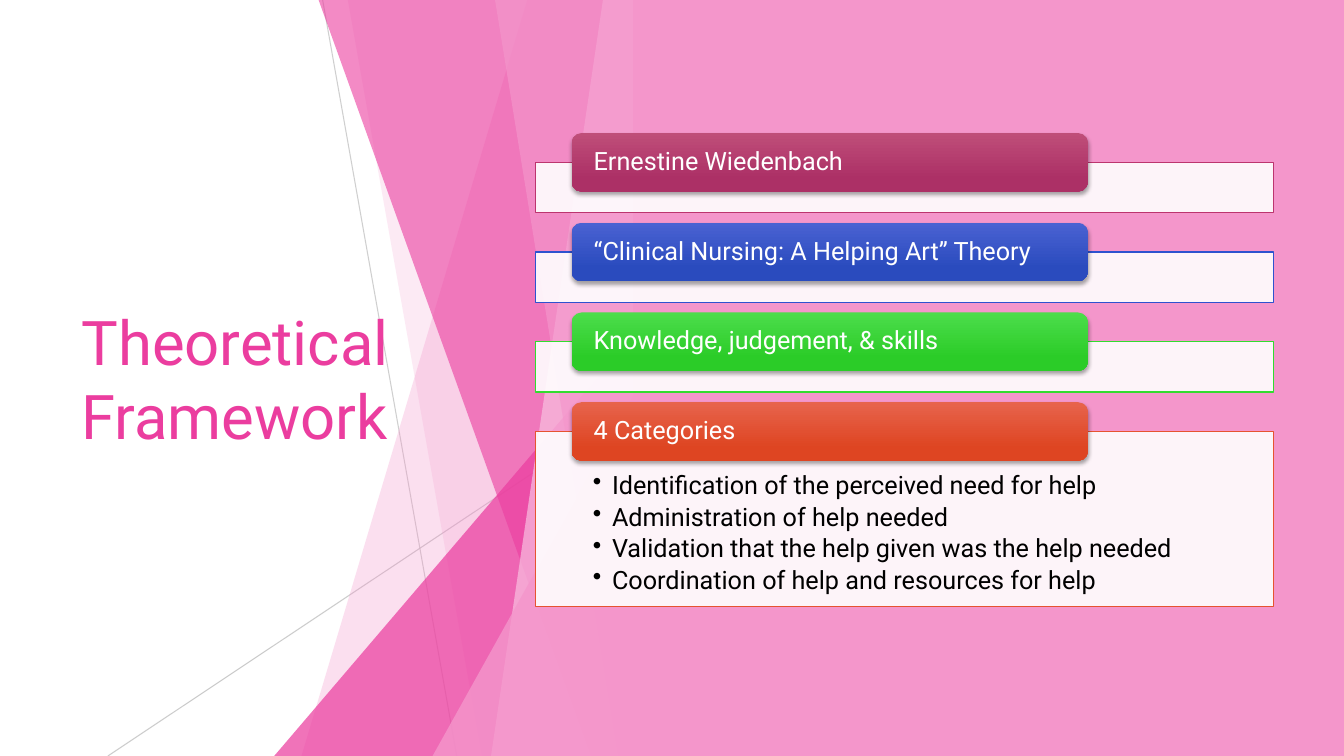
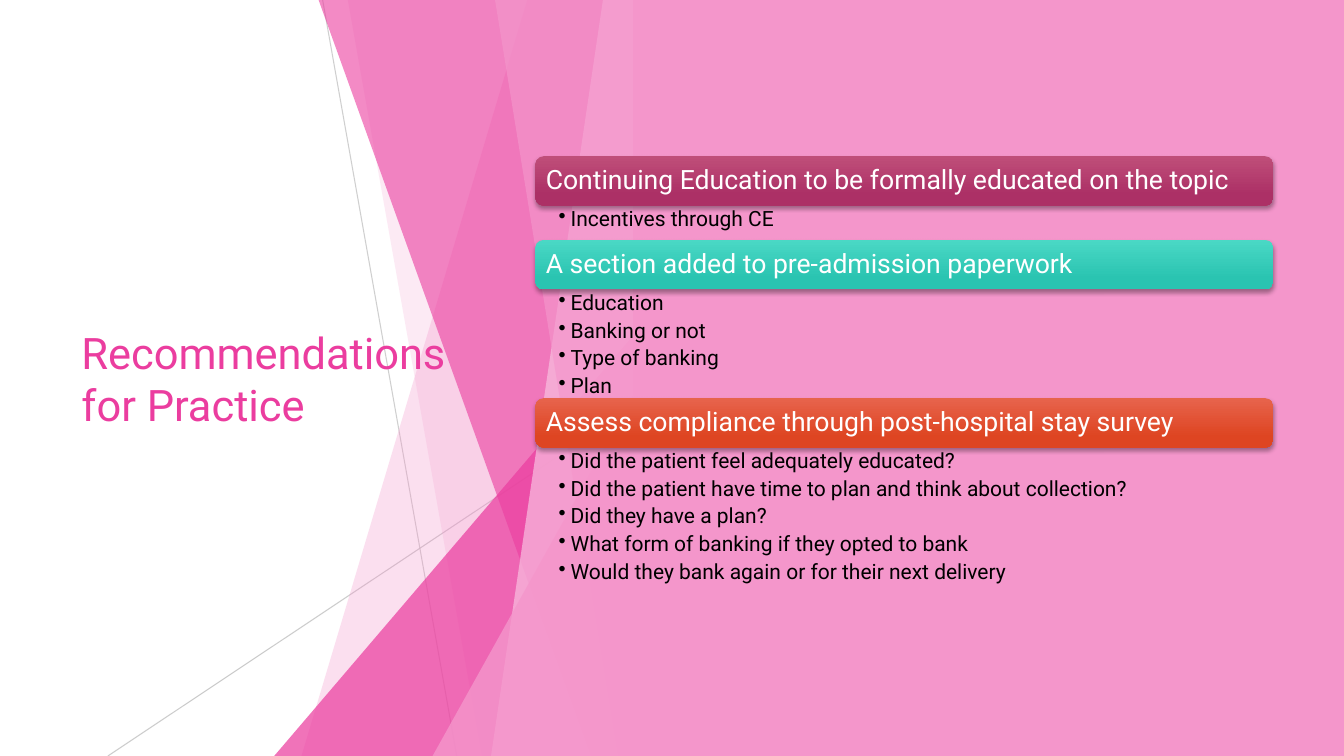
from dataclasses import dataclass

from lxml import etree
from pptx import Presentation
from pptx import util as u
from pptx.dml.color import RGBColor
from pptx.enum import shapes, text
from pptx.oxml.ns import qn


@dataclass(frozen=True)
class Accent:
    top: str
    bottom: str
    outline: str


@dataclass(frozen=True)
class Theme:
    font: str = "Roboto"
    white: str = "FFFFFF"
    black: str = "000000"
    hairline: str = "BFBFBF"
    magenta: str = "EB3D9F"
    pink: str = "F496CB"
    pale_pink: str = "F8C0E0"
    berry: Accent = Accent("BF4E79", "AC3066", "BC356F")
    blue: Accent = Accent("4A62D2", "2A4BBE", "2E52CF")
    green: Accent = Accent("4CDD4B", "2BCC28", "32DC2F")
    teal: Accent = Accent("4AD8C5", "2AC4B1", "2AC4B1")
    orange: Accent = Accent("E7634C", "DE4522", "E65331")
    title_size: float = 44
    long_title_size: float = 31
    card_size: float = 18
    heading_size: float = 19
    list_size: float = 15


THEME = Theme()
SLIDE_WIDTH, SLIDE_HEIGHT = 13.33, 7.5
PANEL_LEFT = 6.28
CONTENT_LEFT, CONTENT_WIDTH = 5.31, 7.32

RECTANGLE = shapes.MSO_SHAPE.RECTANGLE
ROUNDED = shapes.MSO_SHAPE.ROUNDED_RECTANGLE
TRIANGLE = shapes.MSO_SHAPE.RIGHT_TRIANGLE


def rgb(color):
    return RGBColor.from_string(color)


def inches(*lengths):
    return [u.Inches(length) for length in lengths]


def set_opacity(shape, percent):
    """Make every colour set so far on the shape partly transparent."""
    for color in shape._element.spPr.iter(qn("a:srgbClr")):
        etree.SubElement(color, qn("a:alpha"), val=str(percent * 1000))


def fill_flat(shape, color, opacity=100):
    shape.shadow.inherit = False
    shape.line.fill.background()
    shape.fill.solid()
    shape.fill.fore_color.rgb = rgb(color)
    if opacity < 100:
        set_opacity(shape, opacity)


def add_block(slide, kind, left, top, width, height, color, opacity=100):
    block = slide.shapes.add_shape(kind, *inches(left, top, width, height))
    fill_flat(block, color, opacity)
    return block


def add_hairline(slide, start, end, opacity):
    line = slide.shapes.add_connector(
        shapes.MSO_CONNECTOR.STRAIGHT, *inches(*start, *end))
    line.line.width = u.Pt(0.75)
    line.line.color.rgb = rgb(THEME.hairline)
    set_opacity(line, opacity)
    etree.SubElement(line._element.spPr, qn("a:effectLst"))


def add_facet(slide, top_left, bottom_left, color, opacity):
    """Fill from a slanted left edge to the panel, over the full slide height."""
    outline = slide.shapes.build_freeform(*inches(top_left, 0))
    corners = [(PANEL_LEFT, 0), (PANEL_LEFT, SLIDE_HEIGHT), (bottom_left, SLIDE_HEIGHT)]
    outline.add_line_segments([inches(*corner) for corner in corners])
    fill_flat(outline.convert_to_shape(), color, opacity)


def add_corner(slide, left, top, color, opacity):
    """Triangle with its upright side on the panel's edge."""
    corner = add_block(slide, shapes.MSO_SHAPE.ISOSCELES_TRIANGLE, left, top,
                       PANEL_LEFT - left, SLIDE_HEIGHT - top, color, opacity)
    corner.adjustments[0] = 1


def add_backdrop(slide):
    add_hairline(slide, (3.2, 0), (4.53, SLIDE_HEIGHT), 75)
    add_hairline(slide, (PANEL_LEFT, 4.03), (1.07, SLIDE_HEIGHT), 80)
    add_facet(slide, 5.23, 2.99, THEME.pink, 30)
    add_facet(slide, 3.45, 4.78, THEME.pink, 20)
    add_corner(slide, 2.72, 3.33, THEME.magenta, 72)
    add_facet(slide, 3.16, 5.86, THEME.magenta, 60)
    add_facet(slide, 5.98, 4.87, THEME.pale_pink, 70)
    add_facet(slide, 4.91, 6.13, THEME.pink, 65)
    add_corner(slide, 4.29, 3.93, THEME.pink, 80)
    add_block(slide, RECTANGLE, PANEL_LEFT, 0, SLIDE_WIDTH - PANEL_LEFT,
              SLIDE_HEIGHT, THEME.pink)


def set_margins(frame, left, top, right, bottom):
    frame.margin_left, frame.margin_top, frame.margin_right, frame.margin_bottom = inches(
        left, top, right, bottom)


def style_paragraph(para, size, color, line_spacing=0.9):
    para.alignment = text.PP_ALIGN.LEFT
    para.line_spacing = line_spacing
    para.font.name = THEME.font
    para.font.size = u.Pt(size)
    para.font.color.rgb = rgb(color)


def write_line(shape, words, size, color, line_spacing=0.9):
    frame = shape.text_frame
    frame.word_wrap = True
    frame.vertical_anchor = text.MSO_ANCHOR.MIDDLE
    frame.text = words
    style_paragraph(frame.paragraphs[0], size, color, line_spacing)


def write_bullets(shape, items, size, indent, gap):
    frame = shape.text_frame
    frame.word_wrap = True
    frame.vertical_anchor = text.MSO_ANCHOR.TOP
    frame.text = "\n".join(items)
    for para in frame.paragraphs:
        properties = para._p.get_or_add_pPr()
        properties.set("marL", str(u.Inches(indent)))
        properties.set("indent", str(-u.Inches(indent)))
        etree.SubElement(properties, qn("a:buChar"), char="•")
        para.space_after = u.Pt(gap)
        style_paragraph(para, size, THEME.black)


def add_title(slide, words, size):
    box = slide.shapes.add_textbox(*inches(0.71, 1.51, 3.88, 4.48))
    write_line(box, words, size, THEME.magenta, line_spacing=1.0)


def add_banner(slide, words, accent, left, top, width, height, size, margins):
    """Rounded heading with a vertical gradient and a soft shadow."""
    banner = slide.shapes.add_shape(ROUNDED, *inches(left, top, width, height))
    banner.line.fill.background()
    banner.fill.gradient()
    banner.fill.gradient_angle = 270
    for stop, position, color in zip(banner.fill.gradient_stops, (0, 0.78),
                                     (accent.top, accent.bottom)):
        stop.position = position
        stop.color.rgb = rgb(color)
    banner.shadow.inherit = False
    effects = banner._element.spPr.find(qn("a:effectLst"))
    shadow = etree.SubElement(effects, qn("a:outerShdw"), blurRad=str(u.Pt(3)),
                              dist=str(u.Pt(2)), dir="5400000", rotWithShape="0")
    color = etree.SubElement(shadow, qn("a:srgbClr"), val=THEME.black)
    etree.SubElement(color, qn("a:alpha"), val="35000")
    set_margins(banner.text_frame, *margins)
    write_line(banner, words, size, THEME.white)


def add_framed_cards(slide, cards):
    """Outlined frames, each with a banner across its top edge."""
    top, gap = 1.61, 0.39
    for words, accent, items in cards:
        height = 1.74 if items else 0.5
        frame = add_block(slide, RECTANGLE, CONTENT_LEFT, top, CONTENT_WIDTH,
                          height, THEME.white, 90)
        frame.line.color.rgb = rgb(accent.outline)
        frame.line.width = u.Pt(1)
        if items:
            set_margins(frame.text_frame, 0.57, 0.41, 0.57, 0.14)
            write_bullets(frame, items, THEME.card_size, indent=0.19, gap=3.2)
        add_banner(slide, words, accent, 5.67, top - 0.29, 5.12, 0.58,
                   THEME.card_size, (0.19, 0, 0.19, 0))
        top += height + gap


def add_sections(slide, sections):
    """Full-width banners, each followed by its bullets."""
    top, banner_height = 1.55, 0.49
    for words, accent, items in sections:
        add_banner(slide, words, accent, CONTENT_LEFT, top, CONTENT_WIDTH,
                   banner_height, THEME.heading_size, (0.08,) * 4)
        top += banner_height
        list_height = max(0.34, 0.27 * len(items))
        box = slide.shapes.add_textbox(
            *inches(CONTENT_LEFT, top, CONTENT_WIDTH, list_height))
        set_margins(box.text_frame, 0.23, 0.03, 0.15, 0.03)
        write_bullets(box, items, THEME.list_size, indent=0.12, gap=3.5)
        top += list_height


def add_slide(deck, title, title_size):
    slide = deck.slides.add_slide(deck.slide_layouts[6])
    add_backdrop(slide)
    add_title(slide, title, title_size)
    return slide


def main():
    deck = Presentation()
    deck.slide_width, deck.slide_height = inches(SLIDE_WIDTH, SLIDE_HEIGHT)

    framework = add_slide(deck, "Theoretical Framework", THEME.title_size)
    add_framed_cards(framework, [
        ("Ernestine Wiedenbach", THEME.berry, []),
        ("“Clinical Nursing: A Helping Art” Theory", THEME.blue, []),
        ("Knowledge, judgement, & skills", THEME.green, []),
        ("4 Categories", THEME.orange, [
            "Identification of the perceived need for help",
            "Administration of help needed",
            "Validation that the help given was the help needed",
            "Coordination of help and resources for help",
        ]),
    ])

    practice = add_slide(deck, "Recommendations for Practice", THEME.long_title_size)
    add_sections(practice, [
        ("Continuing Education to be formally educated on the topic", THEME.berry,
         ["Incentives through CE"]),
        ("A section added to pre-admission paperwork", THEME.teal,
         ["Education", "Banking or not", "Type of banking", "Plan"]),
        ("Assess compliance through post-hospital stay survey", THEME.orange, [
            "Did the patient feel adequately educated?",
            "Did the patient have time to plan and think about collection?",
            "Did they have a plan?",
            "What form of banking if they opted to bank",
            "Would they bank again or for their next delivery",
        ]),
    ])

    deck.save("out.pptx")


if __name__ == "__main__":
    main()
